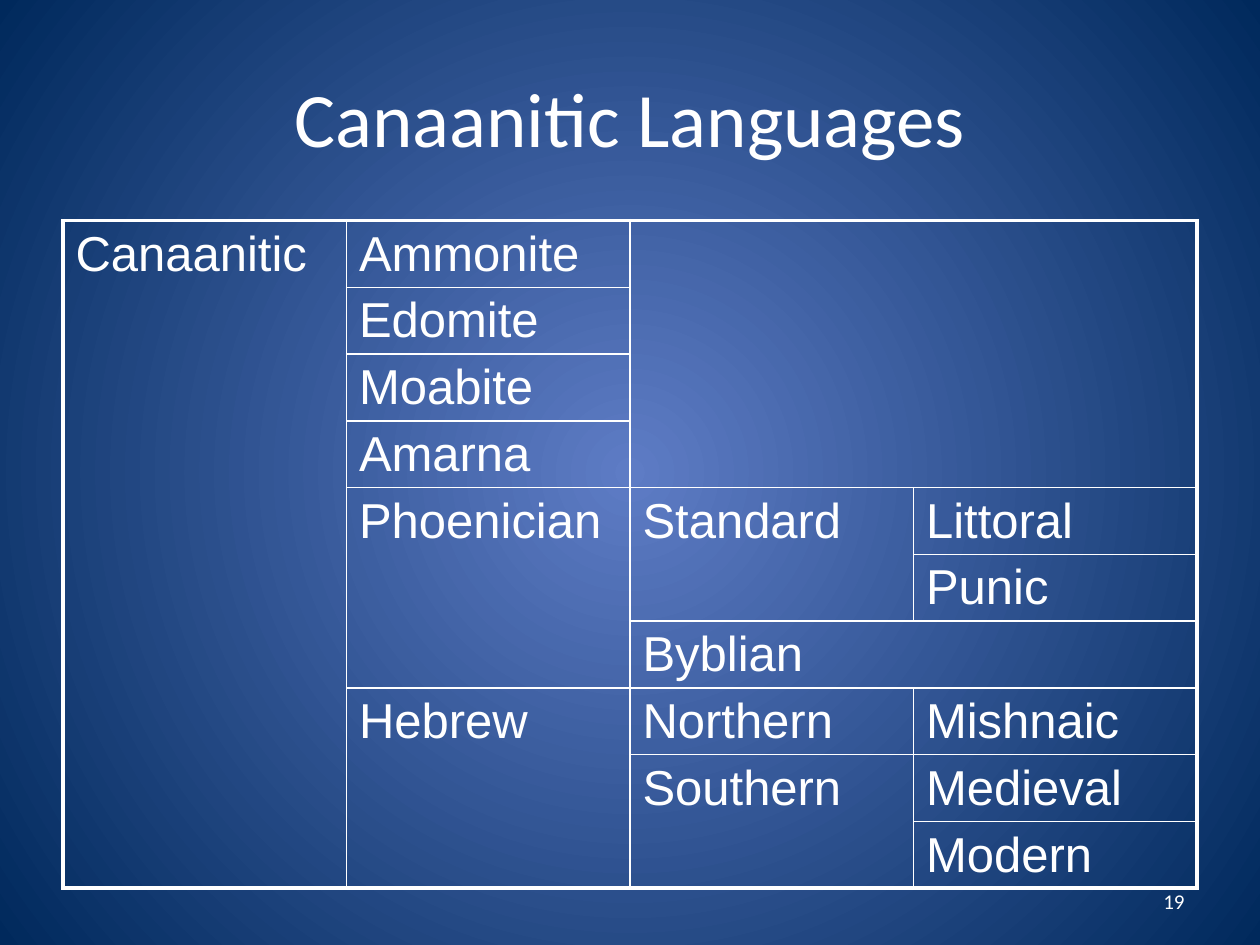
from dataclasses import dataclass
from itertools import product

from lxml import etree
from pptx import Presentation
from pptx import util as u
from pptx.dml.color import RGBColor
from pptx.enum import text
from pptx.oxml.ns import qn


@dataclass(frozen=True)
class Theme:
    """Colours, fonts and type sizes of the slide."""
    ink: str = "FFFFFF"
    centre: str = "5E7CC5"
    edge: str = "00295C"
    heading_font: str = "Calibri"
    table_font: str = "Arial"
    title_size: float = 44
    table_size: float = 28
    number_size: float = 12
    outer_line: float = 2.25
    inner_line: float = 1


@dataclass(frozen=True)
class Block:
    """A table entry and the grid cells it covers."""
    label: str
    row: int
    column: int
    rows: int = 1
    columns: int = 1


THEME = Theme()
ROWS, COLUMNS = 10, 4
ROW_HEIGHT, COLUMN_WIDTH = 0.53, 2.25
NO_STYLE = "{2D5ABB26-0587-4C30-8999-92F81FD0307C}"

LANGUAGES = [
    Block("Canaanitic", 0, 0, rows=10),
    Block("Ammonite", 0, 1),
    Block("Edomite", 1, 1),
    Block("Moabite", 2, 1),
    Block("Amarna", 3, 1),
    Block("", 0, 2, rows=4, columns=2),
    Block("Phoenician", 4, 1, rows=3),
    Block("Standard", 4, 2, rows=2),
    Block("Littoral", 4, 3),
    Block("Punic", 5, 3),
    Block("Byblian", 6, 2, columns=2),
    Block("Hebrew", 7, 1, rows=3),
    Block("Northern", 7, 2),
    Block("Mishnaic", 7, 3),
    Block("Southern", 8, 2, rows=2),
    Block("Medieval", 8, 3),
    Block("Modern", 9, 3),
]


def apply(target, values: dict) -> None:
    for name, value in values.items():
        setattr(target, name, value)


def write(frame, words: str, font: str, size: float, align) -> None:
    """Put one formatted paragraph into a text frame."""
    para = frame.paragraphs[0]
    para.alignment = align
    span = para.add_run()
    span.text = words
    apply(span.font, {"name": font, "size": u.Pt(size)})
    span.font.color.rgb = RGBColor.from_string(THEME.ink)


def paint_background(page) -> None:
    """Radial gradient, light in the centre."""
    fill = page.background.fill
    fill.gradient()
    for stop, position, colour in zip(fill.gradient_stops, (0, 1), (THEME.centre, THEME.edge)):
        stop.position = position
        stop.color.rgb = RGBColor.from_string(colour)
    gradient = next(page.background._cSld.iter(qn("a:gradFill")))
    linear = gradient.find(qn("a:lin"))
    radial = etree.Element(qn("a:path"), path="circle")
    etree.SubElement(radial, qn("a:fillToRect"), l="50000", t="50000", r="50000", b="50000")
    gradient.replace(linear, radial)


def draw_borders(cell, widths: dict[str, float]) -> None:
    properties = cell._tc.get_or_add_tcPr()
    for index, (side, width) in enumerate(widths.items()):
        line = etree.Element(qn(f"a:ln{side}"), w=str(u.Pt(width)))
        solid = etree.SubElement(line, qn("a:solidFill"))
        etree.SubElement(solid, qn("a:srgbClr"), val=THEME.ink)
        properties.insert(index, line)


def draw_block(table, block: Block) -> None:
    last_row = block.row + block.rows - 1
    last_column = block.column + block.columns - 1
    origin = table.cell(block.row, block.column)
    if block.rows * block.columns > 1:
        origin.merge(table.cell(last_row, last_column))
    if block.label:
        write(origin.text_frame, block.label, THEME.table_font, THEME.table_size,
              text.PP_ALIGN.LEFT)

    # Heavy lines on the table's rim, thin ones inside
    on_rim = {"L": block.column == 0, "R": last_column == COLUMNS - 1,
              "T": block.row == 0, "B": last_row == ROWS - 1}
    widths = {side: THEME.outer_line if rim else THEME.inner_line
              for side, rim in on_rim.items()}
    for row, column in product(range(block.row, last_row + 1),
                               range(block.column, last_column + 1)):
        cell = table.cell(row, column)
        apply(cell, {"margin_left": u.Inches(0.1), "margin_right": u.Inches(0.1),
                     "margin_top": u.Inches(0.05), "margin_bottom": u.Inches(0.03),
                     "vertical_anchor": text.MSO_ANCHOR.TOP})
        cell.fill.background()
        at_boundary = {"L": column == block.column, "R": column == last_column,
                       "T": row == block.row, "B": row == last_row}
        draw_borders(cell, {side: width for side, width in widths.items()
                            if cell.is_merge_origin or at_boundary[side]})


def add_languages(page) -> None:
    frame = page.shapes.add_table(
        ROWS, COLUMNS, u.Inches(0.5), u.Inches(1.75),
        u.Inches(COLUMNS * COLUMN_WIDTH), u.Inches(ROWS * ROW_HEIGHT))
    table = frame.table
    apply(table, {"first_row": False, "horz_banding": False})
    table._tbl.tblPr.find(qn("a:tableStyleId")).text = NO_STYLE
    for row in table.rows:
        row.height = u.Inches(ROW_HEIGHT)
    for block in LANGUAGES:
        draw_block(table, block)


def main() -> None:
    deck = Presentation()
    apply(deck, {"slide_width": u.Inches(10), "slide_height": u.Inches(7.5)})
    page = deck.slides.add_slide(deck.slide_layouts[5])
    paint_background(page)

    # Title
    title = page.shapes.title
    apply(title, {"left": u.Inches(0.5), "top": u.Inches(0.3),
                  "width": u.Inches(9), "height": u.Inches(1.25)})
    title.text_frame.vertical_anchor = text.MSO_ANCHOR.MIDDLE
    write(title.text_frame, "Canaanitic Languages", THEME.heading_font,
          THEME.title_size, text.PP_ALIGN.CENTER)

    # Language family table
    add_languages(page)

    # Page number
    box = page.shapes.add_textbox(u.Inches(7.17), u.Inches(6.95), u.Inches(2.33), u.Inches(0.4))
    apply(box.text_frame, {"word_wrap": True, "vertical_anchor": text.MSO_ANCHOR.MIDDLE})
    write(box.text_frame, "19", THEME.heading_font, THEME.number_size, text.PP_ALIGN.RIGHT)

    deck.save("out.pptx")


if __name__ == "__main__":
    main()
